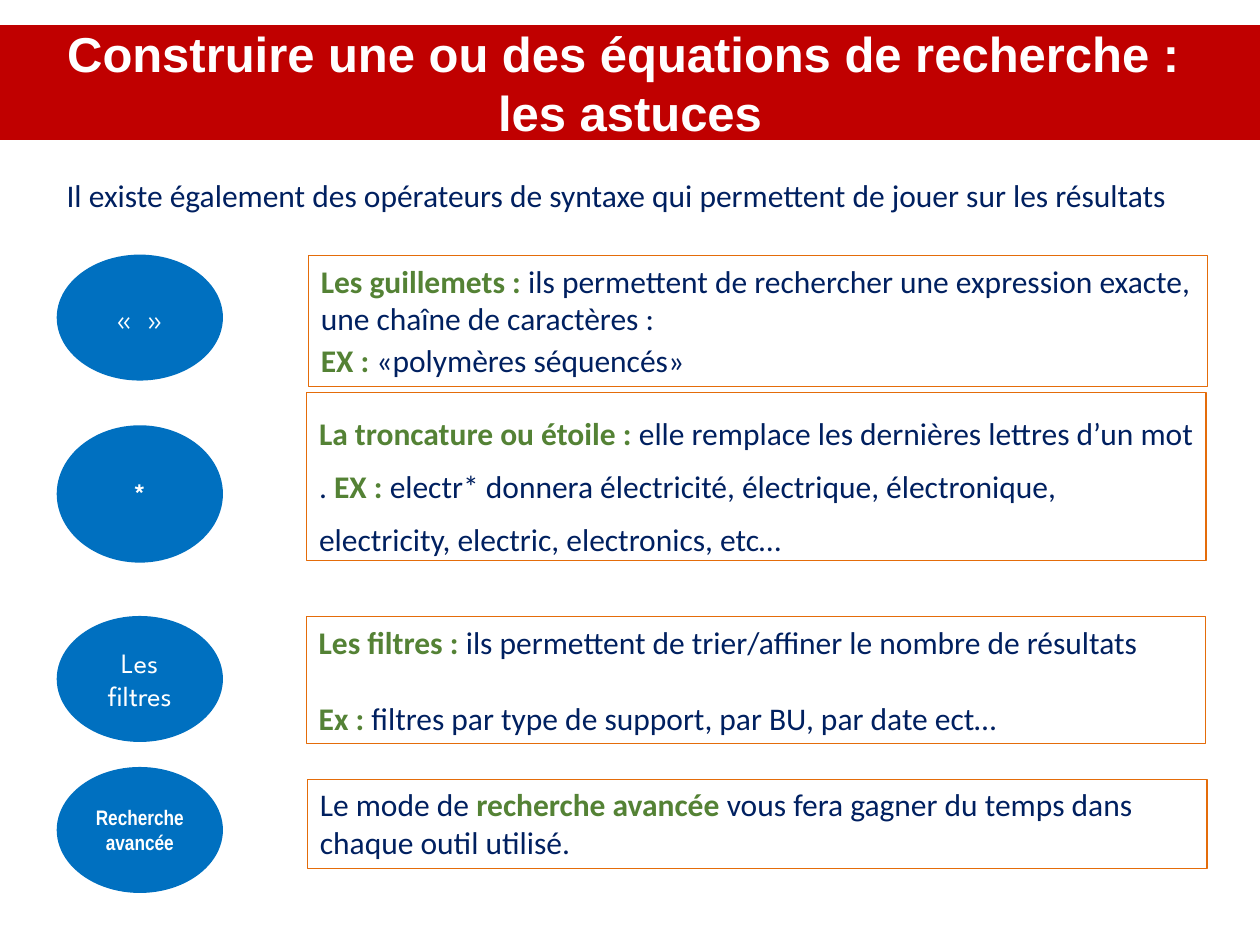
from dataclasses import dataclass

from pptx import Presentation
from pptx.dml.color import RGBColor
from pptx.enum import shapes, text
from pptx.util import Pt


@dataclass(frozen=True)
class Theme:
    banner: str = "C00000"
    badge: str = "0070C0"
    border: str = "E46C0A"
    body: str = "002060"
    key: str = "548235"
    light: str = "FFFFFF"
    title_font: str = "Arial"
    body_font: str = "Calibri"
    badge_font: str = "League Spartan"
    narrow_font: str = "Arial Narrow"
    title_size: int = 28
    body_size: int = 18
    label_size: int = 16
    small_size: int = 12


def write(paragraph, words, *, font, size, color, bold=False):
    for index, line in enumerate(words.split("\n")):
        if index:
            paragraph.add_line_break()
        run = paragraph.add_run()
        run.text = line
        run.font.name = font
        run.font.size = Pt(size)
        run.font.bold = bold
        run.font.color.rgb = RGBColor.from_string(color)


class Deck:
    def __init__(self, theme):
        self.theme = theme
        self.file = Presentation()
        self.file.slide_width, self.file.slide_height = Pt(720), Pt(540)
        self.slide = self.file.slides.add_slide(self.file.slide_layouts[5])

    def title(self, words, left, top, width, height):
        banner = self.slide.shapes.title
        banner.left, banner.top = Pt(left), Pt(top)
        banner.width, banner.height = Pt(width), Pt(height)
        banner.fill.solid()
        banner.fill.fore_color.rgb = RGBColor.from_string(self.theme.banner)
        frame = banner.text_frame
        frame.auto_size = text.MSO_AUTO_SIZE.NONE
        frame.vertical_anchor = text.MSO_ANCHOR.MIDDLE
        frame.margin_left = frame.margin_right = 0
        frame.margin_top = frame.margin_bottom = 0
        frame.paragraphs[0].alignment = text.PP_ALIGN.CENTER
        write(frame.paragraphs[0], words, font=self.theme.title_font,
              size=self.theme.title_size, color=self.theme.light, bold=True)

    def intro(self, words, left, top, width, height):
        sentence = self.slide.shapes.add_textbox(Pt(left), Pt(top), Pt(width), Pt(height))
        sentence.text_frame.word_wrap = True
        sentence.text_frame.auto_size = text.MSO_AUTO_SIZE.SHAPE_TO_FIT_TEXT
        write(sentence.text_frame.paragraphs[0], words, font=self.theme.body_font,
              size=self.theme.body_size, color=self.theme.body)

    def badge(self, words, top, height=72, **style):
        oval = self.slide.shapes.add_shape(
            shapes.MSO_SHAPE.OVAL, Pt(32.4), Pt(top), Pt(95), Pt(height))
        oval.shadow.inherit = False
        oval.fill.solid()
        oval.fill.fore_color.rgb = RGBColor.from_string(self.theme.badge)
        oval.line.fill.background()
        frame = oval.text_frame
        frame.word_wrap = True
        frame.vertical_anchor = text.MSO_ANCHOR.MIDDLE
        frame.paragraphs[0].alignment = text.PP_ALIGN.CENTER
        look = {"font": self.theme.badge_font, "size": self.theme.body_size} | style
        write(frame.paragraphs[0], words, color=self.theme.light, **look)

    def panel(self, paragraphs, left, top, height, *, filled=False,
              before=0, after=0, spacing=1.0):
        box = self.slide.shapes.add_shape(
            shapes.MSO_SHAPE.RECTANGLE, Pt(left), Pt(top), Pt(514), Pt(height))
        box.shadow.inherit = False
        if filled:
            box.fill.solid()
            box.fill.fore_color.rgb = RGBColor.from_string(self.theme.light)
        else:
            box.fill.background()
        box.line.color.rgb = RGBColor.from_string(self.theme.border)
        box.line.width = Pt(0.75)
        frame = box.text_frame
        frame.word_wrap = True
        frame.auto_size = text.MSO_AUTO_SIZE.SHAPE_TO_FIT_TEXT
        frame.vertical_anchor = text.MSO_ANCHOR.TOP
        for index, pieces in enumerate(paragraphs):
            paragraph = frame.add_paragraph() if index else frame.paragraphs[0]
            paragraph.alignment = text.PP_ALIGN.LEFT
            paragraph.line_spacing = spacing
            paragraph.space_before = Pt(before if index else 0)
            paragraph.space_after = Pt(after)
            for words, is_key in pieces:
                write(paragraph, words, font=self.theme.body_font,
                      size=self.theme.body_size, bold=is_key,
                      color=self.theme.key if is_key else self.theme.body)


def main():
    theme = Theme()
    deck = Deck(theme)
    deck.title("Construire une ou des équations de recherche : \nles astuces",
               0, 14.4, 720, 65.5)
    deck.intro("Il existe également des opérateurs de syntaxe qui permettent "
               "de jouer sur les résultats", 31, 97.2, 659.5, 29)

    deck.badge("«  »", 145.5)
    deck.badge("*", 243, 78.5, bold=True)
    deck.badge("Les filtres", 352, size=theme.label_size)

    deck.panel([
        [("Les guillemets : ", True),
         ("ils permettent de rechercher une expression exacte, "
          "une chaîne de caractères :", False)],
        [("EX : ", True), ("«polymères séquencés»", False)],
    ], 176.2, 146, 75, after=2)
    deck.panel([
        [("La troncature ou étoile : ", True),
         ("elle remplace les dernières lettres d’un mot . ", False),
         ("EX : ", True),
         ("electr* donnera électricité, électrique, électronique, "
          "electricity, electric, electronics, etc…", False)],
    ], 175.2, 224.4, 96, spacing=1.4)
    deck.panel([
        [("Les filtres : ", True),
         ("ils permettent de trier/affiner le nombre de résultats", False)],
        [("Ex : ", True),
         ("filtres par type de support, par BU, par date ect…", False)],
    ], 175, 352.2, 72.7, before=22)
    deck.panel([
        [("Le mode de ", False), ("recherche avancée ", True),
         ("vous fera gagner du temps dans chaque outil utilisé.", False)],
    ], 175.7, 445.3, 51, filled=True)

    deck.badge("Recherche avancée", 438.3, font=theme.narrow_font,
               size=theme.small_size, bold=True)
    deck.file.save("out.pptx")


if __name__ == "__main__":
    main()
